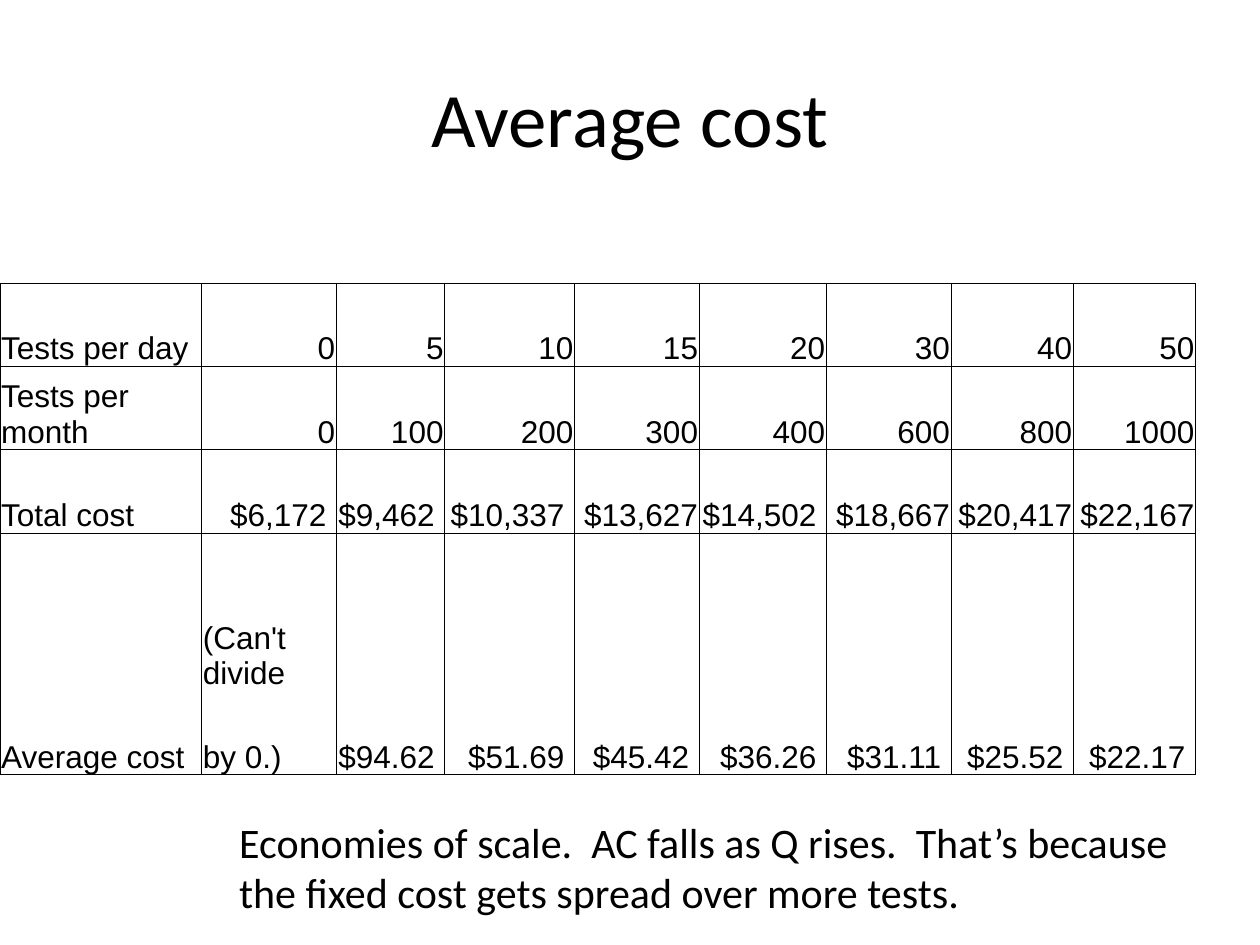
from dataclasses import dataclass

from lxml import etree
from pptx import Presentation
from pptx import util as u
from pptx.dml.color import RGBColor
from pptx.enum import text
from pptx.oxml import ns

BLACK = RGBColor(0x00, 0x00, 0x00)
BORDER_WIDTH = u.Pt(0.5)
COLUMN_WIDTHS = [115.2, 77.04, 61.92, 74.16, 71.28, 72.72, 71.28, 69.84, 69.84]
ROW_HEIGHTS = [47.52, 47.52, 47.52, 90.72, 47.52]


@dataclass
class CostRow:
    label: str
    values: list[str]


COST_ROWS = [
    CostRow("Tests per day", ["0", "5", "10", "15", "20", "30", "40", "50"]),
    CostRow("Tests per month", ["0", "100", "200", "300", "400", "600", "800", "1000"]),
    CostRow("Total cost", ["$6,172 ", "$9,462 ", "$10,337 ", "$13,627 ",
                           "$14,502 ", "$18,667 ", "$20,417 ", "$22,167 "]),
    CostRow("Average cost", ["(Can't divide", "$94.62 ", "$51.69 ", "$45.42 ",
                             "$36.26 ", "$31.11 ", "$25.52 ", "$22.17 "]),
    CostRow("", ["by 0.)"] + [""] * 7),
]
AVERAGE_ROW = 3
NOTE_COLUMN = 1


def place(shape, left: float, top: float, width: float, height: float) -> None:
    shape.left, shape.top = u.Pt(left), u.Pt(top)
    shape.width, shape.height = u.Pt(width), u.Pt(height)


def style_paragraph(paragraph, size: float, face: str, align) -> None:
    paragraph.alignment = align
    paragraph.font.size = u.Pt(size)
    paragraph.font.name = face
    paragraph.font.color.rgb = BLACK


def set_borders(cell, open_side: str) -> None:
    properties = cell._tc.get_or_add_tcPr()
    for side in "LRTB":
        line = etree.SubElement(properties, ns.qn(f"a:ln{side}"), w=str(BORDER_WIDTH))
        if side == open_side:
            etree.SubElement(line, ns.qn("a:noFill"))
        else:
            fill = etree.SubElement(line, ns.qn("a:solidFill"))
            etree.SubElement(fill, ns.qn("a:srgbClr"), val=str(BLACK))


def fill_cell(cell, content: str, align, open_side: str) -> None:
    cell.text = content
    style_paragraph(cell.text_frame.paragraphs[0], 18, "Arial", align)
    cell.vertical_anchor = text.MSO_ANCHOR.BOTTOM
    cell.margin_left = cell.margin_right = cell.margin_top = u.Pt(0.72)
    cell.margin_bottom = 0
    set_borders(cell, open_side)
    cell.fill.background()


def add_cost_table(slide) -> None:
    costs = slide.shapes.add_table(
        len(ROW_HEIGHTS), len(COLUMN_WIDTHS), u.Pt(0), u.Pt(162),
        u.Pt(sum(COLUMN_WIDTHS)), u.Pt(sum(ROW_HEIGHTS))).table
    costs.first_row = costs.horz_banding = False
    for column, width in zip(costs.columns, COLUMN_WIDTHS):
        column.width = u.Pt(width)
    for row, height in zip(costs.rows, ROW_HEIGHTS):
        row.height = u.Pt(height)

    note_open_sides = {AVERAGE_ROW: "B", AVERAGE_ROW + 1: "T"}
    for r, cost_row in enumerate(COST_ROWS):
        for c, content in enumerate([cost_row.label, *cost_row.values]):
            is_note = c == NOTE_COLUMN and r in note_open_sides
            align = text.PP_ALIGN.LEFT if c == 0 or is_note else text.PP_ALIGN.RIGHT
            fill_cell(costs.cell(r, c), content, align,
                      note_open_sides[r] if is_note else "")

    for c in range(len(COLUMN_WIDTHS)):
        if c != NOTE_COLUMN:
            costs.cell(AVERAGE_ROW, c).merge(costs.cell(AVERAGE_ROW + 1, c))


def add_conclusion(slide) -> None:
    conclusion = slide.shapes.add_textbox(u.Pt(129.6), u.Pt(462.96), u.Pt(549.36), u.Pt(65.52))
    frame = conclusion.text_frame
    frame.word_wrap = True
    frame.auto_size = text.MSO_AUTO_SIZE.SHAPE_TO_FIT_TEXT
    frame.text = ("Economies of scale.  AC falls as Q rises.  That’s because "
                  "the fixed cost gets spread over more tests.")
    style_paragraph(frame.paragraphs[0], 24, "Calibri", text.PP_ALIGN.LEFT)


def main() -> None:
    deck = Presentation()
    deck.slide_width, deck.slide_height = u.Pt(720), u.Pt(540)
    slide = deck.slides.add_slide(deck.slide_layouts.get_by_name("Title Only"))

    title = slide.shapes.title
    place(title, 36, 21.6, 648, 90)
    title.text_frame.text = "Average cost"
    title.text_frame.vertical_anchor = text.MSO_ANCHOR.MIDDLE
    style_paragraph(title.text_frame.paragraphs[0], 44, "Calibri", text.PP_ALIGN.CENTER)

    add_cost_table(slide)
    add_conclusion(slide)
    deck.save("out.pptx")


if __name__ == "__main__":
    main()
